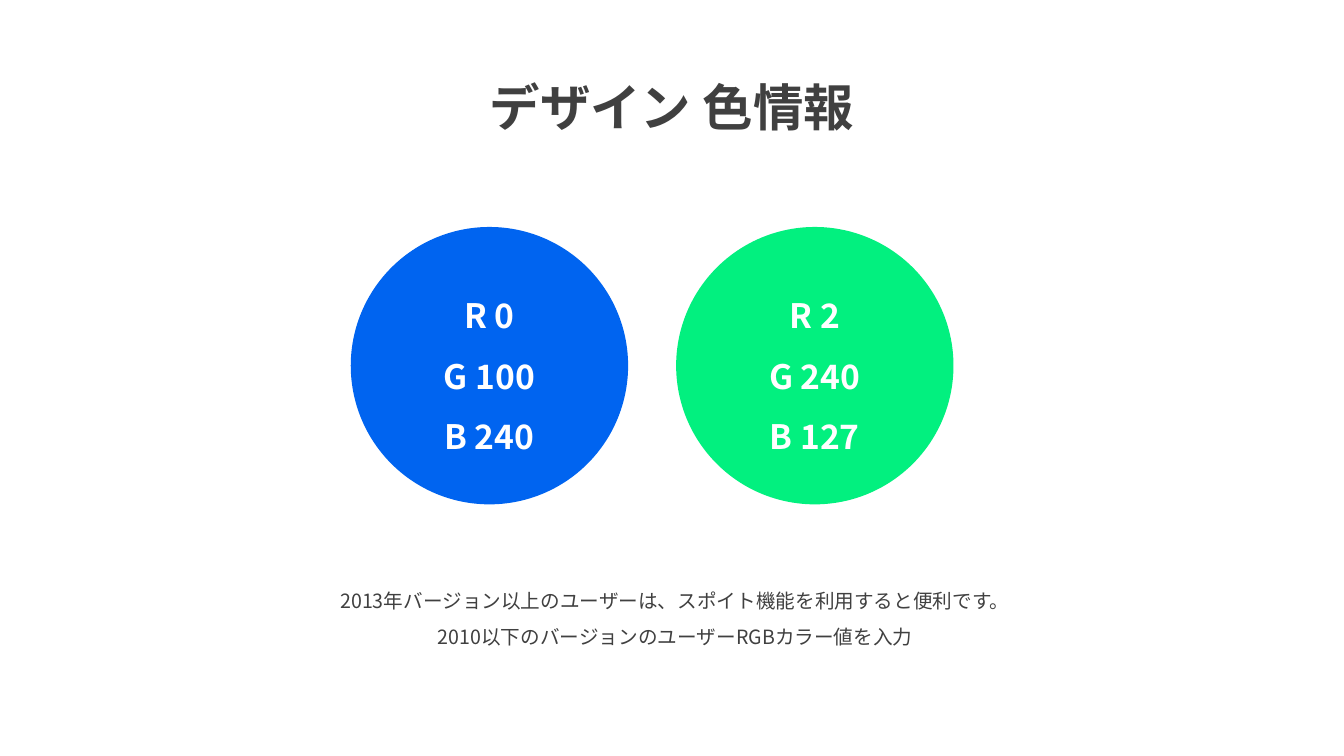
from pptx import Presentation
from pptx.dml.color import RGBColor as RGB
from pptx.enum.shapes import MSO_SHAPE as Kind
from pptx.enum.text import MSO_ANCHOR as Anchor, MSO_AUTO_SIZE as Auto, PP_ALIGN as Align
from pptx.oxml.ns import qn
from pptx.util import Cm, Pt
from lxml.etree import SubElement as Sub

COLORS = {"blue": "0064F0", "green": "02F07F", "ink": "404040", "white": "FFFFFF"}


class Deck:
    font = "Noto Sans CJK KR"
    spacing = 1.5

    def __init__(self, slide):
        self.slide = slide

    def style(self, frame, lines, size, color, bold):
        frame.word_wrap = True
        frame.text = "\n".join(lines)
        for para in frame.paragraphs:
            para.alignment = Align.CENTER
            para.line_spacing = self.spacing
            for run in para.runs:
                run.font.size = Pt(size)
                run.font.bold = bold
                run.font.name = self.font
                run.font.color.rgb = RGB.from_string(COLORS[color])
                # East Asian typeface
                Sub(run._r.get_or_add_rPr(), qn("a:ea"), typeface=self.font)

    def text(self, box, lines, size, bold=False):
        frame = self.slide.shapes.add_textbox(*map(Cm, box)).text_frame
        self.style(frame, lines, size, "ink", bold)
        frame.auto_size = Auto.SHAPE_TO_FIT_TEXT

    def circle(self, left, top, size, fill, lines):
        disc = self.slide.shapes.add_shape(
            Kind.OVAL, Cm(left), Cm(top), Cm(size), Cm(size))
        disc.shadow.inherit = False
        disc.fill.solid()
        disc.fill.fore_color.rgb = RGB.from_string(COLORS[fill])
        disc.line.fill.background()
        disc.text_frame.vertical_anchor = Anchor.MIDDLE
        self.style(disc.text_frame, lines, 24, "white", True)


def main():
    prs = Presentation()
    prs.slide_width, prs.slide_height = Cm(33.87), Cm(19.05)
    deck = Deck(prs.slides.add_slide(prs.slide_layouts[6]))

    # Title
    deck.text((10.77, 1.02, 12.32, 2.31), ["デザイン 色情報"], 36, True)

    # Colour circles, labelled with their RGB values
    swatches = [("blue", (0, 100, 240)), ("green", (2, 240, 127))]
    for i, (fill, values) in enumerate(swatches):
        lines = [f"{name} {value}" for name, value in zip("RGB", values)]
        deck.circle(8.84 + i * 8.2, 5.72, 6.99, fill, lines)

    # Usage note
    deck.text((6.4, 14.43, 21.23, 1.96), [
        "2013年バージョン以上のユーザーは、スポイト機能を利用すると便利です。",
        "2010以下のバージョンのユーザーRGBカラー値を入力",
    ], 14)

    prs.save("out.pptx")


if __name__ == "__main__":
    main()
